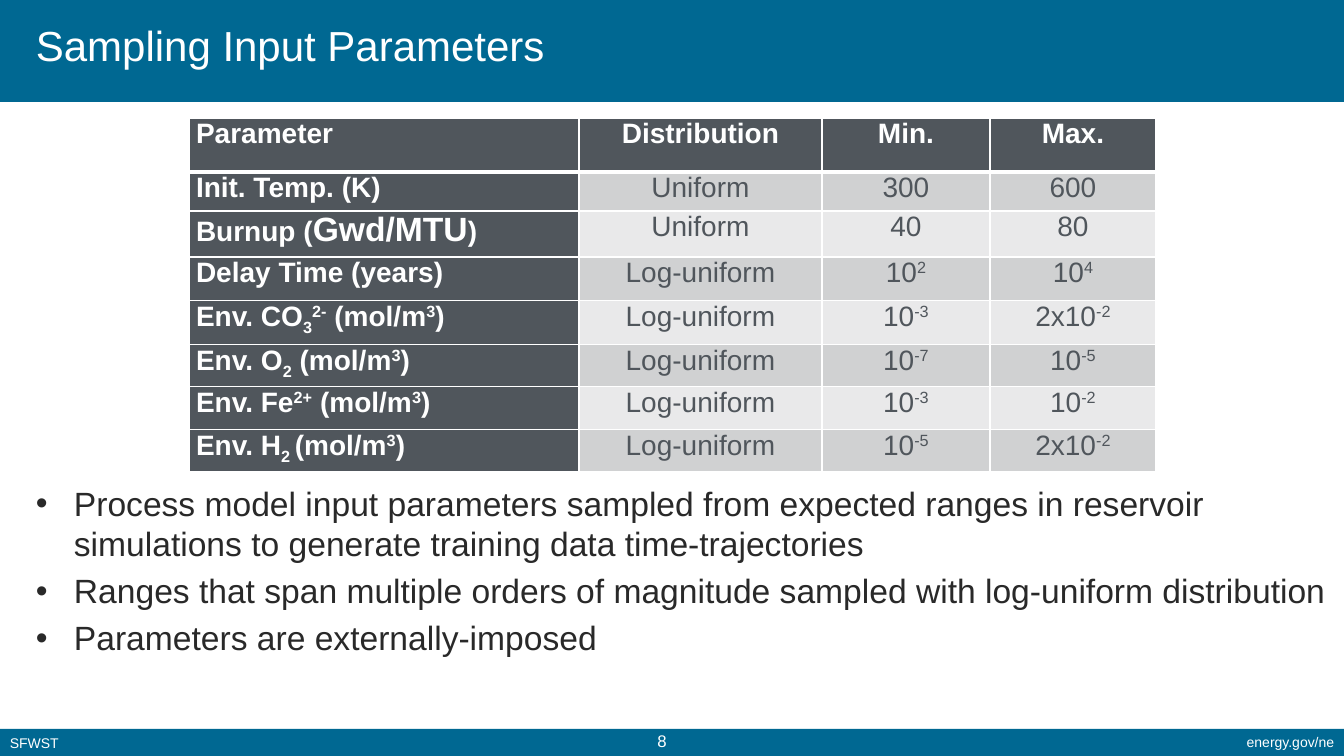
from dataclasses import dataclass

from lxml import etree
from pptx import Presentation
from pptx.dml.color import RGBColor
from pptx.enum.shapes import MSO_SHAPE
from pptx.enum.text import MSO_ANCHOR, PP_ALIGN
from pptx.oxml.ns import qn
from pptx.util import Pt

RECT = MSO_SHAPE.RECTANGLE
MIDDLE, TOP = MSO_ANCHOR.MIDDLE, MSO_ANCHOR.TOP
LEFT, CENTER, RIGHT = PP_ALIGN.LEFT, PP_ALIGN.CENTER, PP_ALIGN.RIGHT


@dataclass(frozen=True)
class Theme:
    font: str = "Arial"
    blue: str = "006892"
    slate: str = "50565C"
    white: str = "FFFFFF"
    ink: str = "292929"
    bands: tuple = ("D0D1D2", "E9E9EA")
    title: int = 30
    body: int = 24
    table: int = 20
    number: int = 12
    footer: int = 10


def px(n):
    """Pixels to EMU, at 1344 px for 13.33 inches."""
    return round(n * 914400 / 100.8)


def set_all(obj, values):
    for name, value in values.items():
        setattr(obj, name, value)


class SlideBuilder:
    # Prefix of a "|" separated segment: baseline shift in 1/1000 percent
    SHIFTS = {"^": 30000, "_": -25000}

    def __init__(self, slide, theme):
        self.slide, self.theme = slide, theme

    def add_runs(self, p, text, size, color, bold=False, **para):
        """Segments: ^ superscript, _ subscript, + body size."""
        set_all(p, para)
        for part in text.split("|"):
            mark = part[0] if part[0] in "^_+" else ""
            r = p.add_run()
            r.text = part[len(mark):]
            pts = self.theme.body if mark == "+" else size
            set_all(r.font, {"name": self.theme.font, "size": Pt(pts), "bold": bold})
            r.font.color.rgb = RGBColor.from_string(color)
            if mark in self.SHIFTS:
                r.font._element.set("baseline", str(self.SHIFTS[mark]))

    def bar(self, x, y, w, h, color):
        sp = self.slide.shapes.add_shape(RECT, px(x), px(y), px(w), px(h))
        sp.shadow.inherit = False
        sp.fill.solid()
        sp.fill.fore_color.rgb = RGBColor.from_string(color)
        sp.line.fill.background()
        return sp

    def text(self, x, y, w, h, lines, size, color, anchor=TOP, bullet=False, **para):
        tf = self.slide.shapes.add_textbox(px(x), px(y), px(w), px(h)).text_frame
        set_all(tf, {"word_wrap": True, "vertical_anchor": anchor})
        for i, line in enumerate(lines):
            p = tf.add_paragraph() if i else tf.paragraphs[0]
            self.add_runs(p, line, size, color, **para)
            if bullet:
                pPr = p._p.get_or_add_pPr()
                pPr.set("marL", str(px(38)))
                pPr.set("indent", str(-px(38)))
                etree.SubElement(pPr, qn("a:buFont")).set("typeface", self.theme.font)
                etree.SubElement(pPr, qn("a:buChar")).set("char", "•")

    def borders(self, cell, widths):
        tcPr = cell._tc.get_or_add_tcPr()
        for i, (side, width) in enumerate(widths.items()):
            ln = etree.Element(qn(f"a:ln{side}"), w=str(Pt(width)))
            fill = etree.SubElement(ln, qn("a:solidFill"))
            etree.SubElement(fill, qn("a:srgbClr")).set("val", self.theme.white)
            tcPr.insert(i, ln)

    def table(self, x, y, widths, heights, rows):
        t = self.theme
        tbl = self.slide.shapes.add_table(
            len(rows), len(widths), px(x), px(y), px(sum(widths)), px(sum(heights))
        ).table
        for col, w in zip(tbl.columns, widths):
            col.width = px(w)
        for row, h in zip(tbl.rows, heights):
            row.height = px(h)
        for i, row in enumerate(rows):
            for j, text in enumerate(row):
                cell = tbl.cell(i, j)
                heading = i == 0 or j == 0
                set_all(cell, {"margin_left": px(7), "margin_right": px(7),
                               "margin_top": 0, "margin_bottom": 0})
                cell.fill.solid()
                fill = t.slate if heading else t.bands[(i - 1) % 2]
                cell.fill.fore_color.rgb = RGBColor.from_string(fill)
                self.borders(cell, {"L": 1, "R": 1, "T": 3 if i == 1 else 1,
                                    "B": 3 if i == 0 else 1})
                self.add_runs(cell.text_frame.paragraphs[0], text, t.table,
                              t.white if heading else t.slate, bold=heading,
                              alignment=CENTER if j else LEFT)


PARAMETERS = [
    ("Parameter", "Distribution", "Min.", "Max."),
    ("Init. Temp. (K)", "Uniform", "300", "600"),
    ("Burnup (|+Gwd/MTU|)", "Uniform", "40", "80"),
    ("Delay Time (years)", "Log-uniform", "10|^2", "10|^4"),
    ("Env. CO|_3|^2‑| (mol/m|^3|)", "Log-uniform", "10|^-3", "2x10|^-2"),
    ("Env. O|_2| (mol/m|^3|)", "Log-uniform", "10|^-7", "10|^-5"),
    ("Env. Fe|^2+| (mol/m|^3|)", "Log-uniform", "10|^-3", "10|^-2"),
    ("Env. H|_2 |(mol/m|^3|)", "Log-uniform", "10|^-5", "2x10|^-2"),
]
POINTS = [
    "Process model input parameters sampled from expected ranges in reservoir "
    "simulations to generate training data time-trajectories",
    "Ranges that span multiple orders of magnitude sampled with log-uniform distribution",
    "Parameters are externally-imposed",
]


def main():
    prs = Presentation()
    set_all(prs, {"slide_width": px(1344), "slide_height": px(756)})
    theme = Theme()
    s = SlideBuilder(prs.slides.add_slide(prs.slide_layouts[6]), theme)

    # Header and footer bars
    s.bar(0, 0, 1344, 102, theme.blue)
    footer = s.bar(0, 729, 1344, 27, theme.blue)
    footer.text_frame.vertical_anchor = MIDDLE
    s.add_runs(footer.text_frame.paragraphs[0], "SFWST", theme.footer, theme.white,
               alignment=LEFT)
    s.text(805, 730, 539, 26, ["energy.gov/ne"], theme.footer, theme.white,
           alignment=RIGHT, line_spacing=0.9)
    s.text(635, 726, 54, 30, ["8"], theme.number, theme.white, alignment=CENTER)

    # Title
    s.text(26, 0, 1286, 100, ["Sampling Input Parameters"], theme.title, theme.white,
           anchor=MIDDLE, line_spacing=Pt(28))

    # Key points
    s.text(26, 478, 1363, 228, POINTS, theme.body, theme.ink, bullet=True,
           space_before=Pt(theme.body * 0.2))

    # Parameter table
    s.table(189, 118, [390, 243, 168, 166], [54, 39, 46, 44, 44, 42, 43, 42], PARAMETERS)

    prs.save("out.pptx")


if __name__ == "__main__":
    main()
